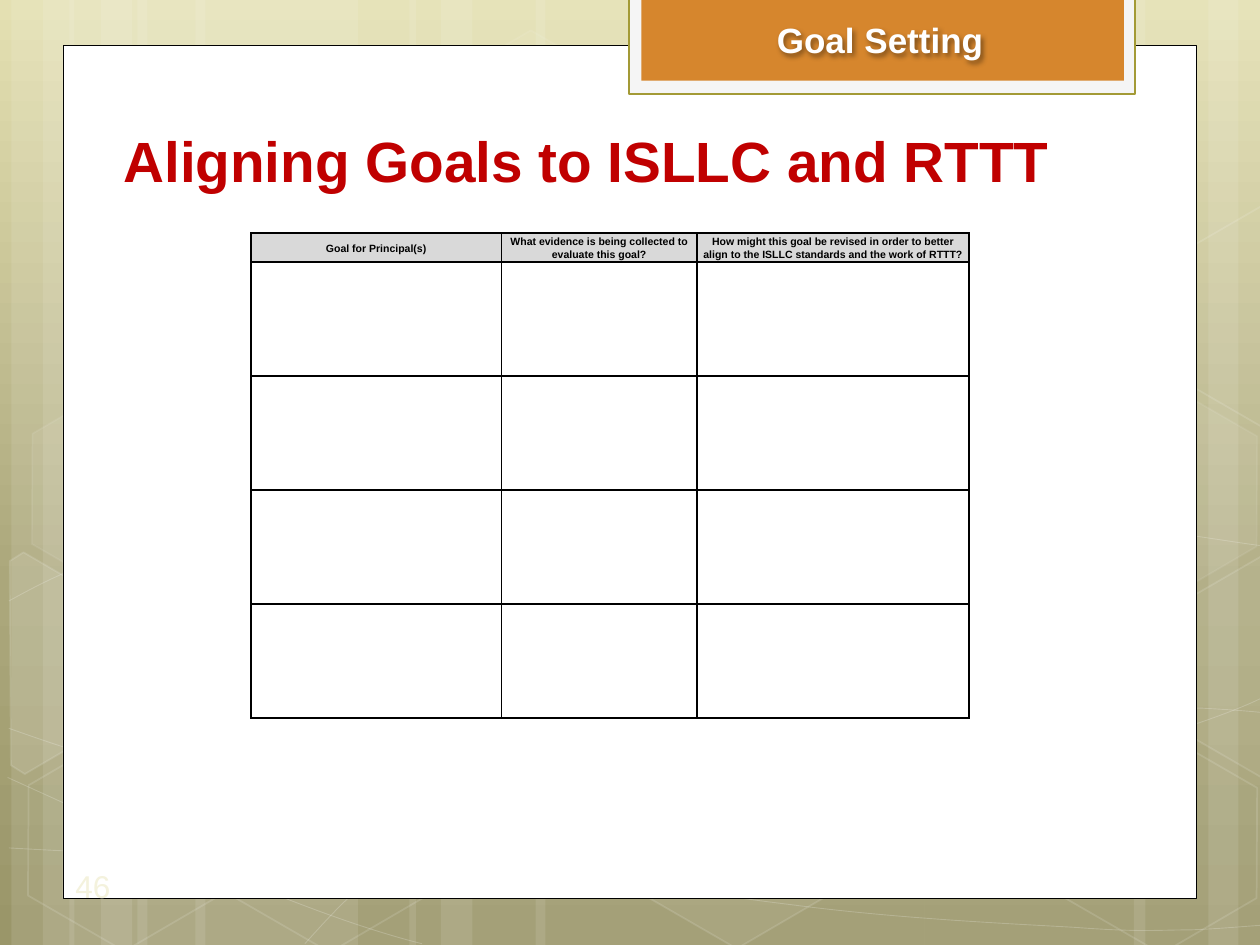
from math import cos, radians, sin
from lxml.etree import SubElement
from pptx import Presentation
from pptx.dml.color import RGBColor
from pptx.enum.shapes import MSO_SHAPE as SHAPE
from pptx.enum.text import MSO_ANCHOR as ANCHOR, PP_ALIGN as ALIGN
from pptx.oxml import parse_xml
from pptx.oxml.ns import nsdecls, qn
from pptx.util import Inches, Pt

WHITE = RGBColor(0xFF, 0xFF, 0xFF)
BLACK = RGBColor(0, 0, 0)
RED = RGBColor(0xC0, 0, 0)
ORANGE = RGBColor(0xD6, 0x86, 0x2D)
OLIVE = RGBColor(0xA3, 0x9A, 0x36)
PALE = RGBColor(0xF5, 0xF5, 0xF5)
CREAM = RGBColor(0xF4, 0xF2, 0xDD)
GREY = RGBColor(0xD9, 0xD9, 0xD9)
BACKDROP = [(0, "E4E0B2"), (62, "ABA77B"), (100, "9A9669")]

# Left and width of the full-height stripes
STRIPES = [(1.09, 1.75), (0.09, 0.5), (0.34, 0.83), (1.55, 1.75), (0.55, 0.5),
           (0.8, 0.83), (7.34, 1.75), (9.59, 0.5), (9, 0.83), (4.25, 3.09),
           (3.25, 0.5), (3.5, 0.83)]
# Bezier points: a start, then two controls and an end for each piece
CURVES = [
    [(0.07, 6.73), (0.61, 6.76), (1.15, 6.79), (1.9, 6.78), (2.65, 6.77),
     (3.58, 6.75), (4.58, 6.65), (5.58, 6.55), (7, 6.36), (7.92, 6.17),
     (8.83, 5.98), (9.77, 5.68), (10.07, 5.51)],
    [(0.07, 4.77), (0.36, 4.61), (0.65, 4.46), (1.21, 4.31), (1.78, 4.16),
     (2.59, 3.94), (3.47, 3.87), (4.36, 3.8), (5.44, 3.79), (6.54, 3.87),
     (7.64, 3.95), (9.47, 4.26), (10.07, 4.34)],
    [(0.06, 6.17), (1.27, 6.72), (2.47, 7.27), (3.35, 7.49)],
    [(0.07, 5.78), (0.38, 5.89), (0.7, 6), (1.28, 6.16), (1.86, 6.31),
     (2.73, 6.56), (3.57, 6.73), (4.4, 6.9), (5.45, 7.08), (6.28, 7.18),
     (7.11, 7.29), (8, 7.33), (8.53, 7.36), (9.06, 7.4), (9.19, 7.38),
     (9.45, 7.38), (9.71, 7.37), (9.89, 7.35), (10.07, 7.34)],
    [(2.42, 7.49), (2.6, 7.29), (2.78, 7.09), (3.02, 6.91), (3.26, 6.72),
     (3.6, 6.53), (3.88, 6.39), (4.16, 6.25), (4.33, 6.19), (4.69, 6.09),
     (5.06, 5.99), (5.73, 5.85), (6.08, 5.78), (6.44, 5.71), (6.49, 5.71),
     (6.8, 5.69), (7.11, 5.66), (7.6, 5.63), (7.94, 5.62), (8.29, 5.61),
     (8.86, 5.62), (8.86, 5.62), (9.08, 5.62), (9.31, 5.62), (9.53, 5.62),
     (9.71, 5.63), (9.88, 5.64), (10.06, 5.66)],
]
# Left, top, fill opacity and line opacity in percent
HEXAGONS = [(3.34, 0.36, 4, 8), (4.97, 5.89, 6, 12), (0.11, 5.91, 0, 12),
            (0.14, 3.12, 7, 8), (1.74, 5.92, 0, 12), (7.53, 4.53, 10, 12),
            (8.34, 5.93, 0, 12), (8.34, 3.14, 7, 8)]
TILT = 30
# Hexagons cut off by the slide edge: centre, tilted outline and fill opacity
CUT_HEXAGONS = [
    ((0.36, 5.36), [(0.08, 4.45), (0.19, 4.38), (0.96, 4.83), (0.95, 5.7),
                    (0.2, 6.14), (0.09, 6.07)], 10),
    ((9.85, 5.2), [(9.26, 4.85), (10.02, 4.41), (10.09, 4.46), (10.09, 6.13),
                   (10.02, 6.17), (9.26, 5.73)], 4),
    ((9.85, 2.41), [(9.26, 2.07), (10.02, 1.63), (10.1, 1.68), (10.09, 3.35),
                    (10.02, 3.39), (9.26, 2.95)], 0),
]
HEADERS = ["Goal for Principal(s)",
           "What evidence is being collected to evaluate this goal?",
           "How might this goal be revised in order to better align to the "
           "ISLLC standards and the work of RTTT?"]
COL_WIDTHS = [1.99, 1.55, 2.16]
HEADER_H, TABLE_H, GOAL_ROWS = 0.23, 3.85, 4


def paint(sp, fill=None, line=None, width=1):
    sp.shadow.inherit = False
    for part, color in ((sp.fill, fill), (sp.line.fill, line)):
        if color is None:
            part.background()
        else:
            part.solid()
            part.fore_color.rgb = color
    if line is not None:
        sp.line.width = Pt(width)


def veil(sp, fill=0, line=0, width=1):
    """Paint in white with the given opacities in percent."""
    paint(sp, WHITE if fill else None, WHITE if line else None, width)
    for xp, opacity in (("./a:solidFill/a:srgbClr", fill), ("./a:ln/a:solidFill/a:srgbClr", line)):
        for clr in sp._element.spPr.xpath(xp):
            SubElement(clr, qn("a:alpha"), val=str(opacity * 1000))


def add_box(slide, x, y, w, h, kind=SHAPE.RECTANGLE):
    return slide.shapes.add_shape(kind, Inches(x), Inches(y), Inches(w), Inches(h))


def add_outline(slide, points, close=False):
    pts = [(Inches(x), Inches(y)) for x, y in points]
    builder = slide.shapes.build_freeform(*pts[0])
    builder.add_line_segments(pts[1:], close=close)
    return builder.convert_to_shape()


def add_curve(slide, points):
    """Join each three segments of the outline into one cubic Bezier piece."""
    sp = add_outline(slide, points)
    segments = sp._element.spPr.xpath(".//a:lnTo")
    for i in range(0, len(segments), 3):
        bezier = parse_xml(f'<a:cubicBezTo {nsdecls("a")}/>')
        segments[i].addprevious(bezier)
        for segment in segments[i:i + 3]:
            bezier.append(segment[0])
            segment.getparent().remove(segment)
    return sp


def untilt(points, cx, cy):
    c, s = cos(radians(TILT)), sin(radians(TILT))
    return [(cx + (x - cx) * c + (y - cy) * s, cy - (x - cx) * s + (y - cy) * c)
            for x, y in points]


def write(tf, text, size, color, bold=False, align=ALIGN.LEFT):
    tf.text = text
    p = tf.paragraphs[0]
    p.alignment = align
    font = p.runs[0].font
    font.name, font.size, font.bold = "Arial", Pt(size), bold
    font.color.rgb = color
    return p


def place(sp, x, y, w, h, anchor=ANCHOR.TOP):
    sp.left, sp.top, sp.width, sp.height = map(Inches, (x, y, w, h))
    tf = sp.text_frame
    tf.word_wrap, tf.vertical_anchor = True, anchor
    return tf


def add_background(slide):
    stops = "".join(f'<a:gs pos="{pos * 1000}"><a:srgbClr val="{color}"/></a:gs>'
                    for pos, color in BACKDROP)
    slide._element.cSld.insert(0, parse_xml(
        f'<p:bg {nsdecls("p", "a")}><p:bgPr><a:gradFill><a:gsLst>{stops}</a:gsLst>'
        '<a:lin ang="5400000" scaled="0"/></a:gradFill><a:effectLst/></p:bgPr></p:bg>'))
    for x, w in STRIPES:
        veil(add_box(slide, x, 0, w, 7.5), fill=10)
    for points in CURVES:
        veil(add_curve(slide, points), line=20, width=0.5)
    for x, y, fill, line in HEXAGONS:
        sp = add_box(slide, x, y, 1.75, 1.52, SHAPE.HEXAGON)
        sp.rotation = TILT
        sp.adjustments[0], sp.adjustments[1] = 0.285, 1.155
        veil(sp, fill, line)
    for centre, points, fill in CUT_HEXAGONS:
        sp = add_outline(slide, untilt(points, *centre), close=True)
        sp.rotation = TILT
        veil(sp, fill, 12)


def add_tab_label(slide):
    sp = slide.shapes.add_textbox(0, 0, 0, 0)
    tf = place(sp, 5.18, 0.09, 3.61, 0.44, ANCHOR.MIDDLE)
    write(tf, "Goal Setting", 20, WHITE, True, ALIGN.CENTER)
    sp._element.spPr.append(parse_xml(
        f'<a:effectLst {nsdecls("a")}><a:outerShdw blurRad="38100" dist="25400" dir="3600000">'
        '<a:srgbClr val="000000"><a:alpha val="40000"/></a:srgbClr></a:outerShdw></a:effectLst>'))


def add_borders(cell):
    for side in ("lnL", "lnR", "lnT", "lnB"):
        ln = SubElement(cell._tc.get_or_add_tcPr(), qn(f"a:{side}"), w=str(Pt(1)))
        SubElement(SubElement(ln, qn("a:solidFill")), qn("a:srgbClr"), val=str(BLACK))


def add_goal_table(slide):
    table = slide.shapes.add_table(GOAL_ROWS + 1, len(HEADERS), Inches(1.99), Inches(1.85),
                                   Inches(sum(COL_WIDTHS)), Inches(TABLE_H)).table
    table.first_row = table.horz_banding = False
    for col, w in zip(table.columns, COL_WIDTHS):
        col.width = Inches(w)
    for i, row in enumerate(table.rows):
        row.height = Inches((TABLE_H - HEADER_H) / GOAL_ROWS if i else HEADER_H)
    for cell in table.iter_cells():
        add_borders(cell)
        cell.fill.background()
    for j, text in enumerate(HEADERS):
        cell = table.cell(0, j)
        cell.fill.solid()
        cell.fill.fore_color.rgb = GREY
        cell.vertical_anchor = ANCHOR.MIDDLE
        cell.margin_left = cell.margin_right = Inches(0.04)
        cell.margin_top = cell.margin_bottom = 0
        write(cell.text_frame, text, 6, BLACK, True, ALIGN.CENTER).line_spacing = 1.15


def main():
    prs = Presentation()
    prs.slide_width, prs.slide_height = Inches(10), Inches(7.5)
    slide = prs.slides.add_slide(prs.slide_layouts[5])
    add_background(slide)

    # White page and the tab at its top
    paint(add_box(slide, 0.5, 0.36, 9, 6.77), WHITE, BLACK, 0.5)
    paint(add_box(slide, 4.99, -0.02, 4.02, 0.77), PALE, OLIVE, 1.25)
    paint(add_box(slide, 5.09, -0.04, 3.83, 0.68), ORANGE)

    # Title, brought in front of the page
    title = slide.shapes.title
    slide.shapes._spTree.append(title._element)
    tf = place(title, 0.8, 0.95, 8.32, 0.58)
    tf.margin_left = Inches(0.18)
    write(tf, "Aligning Goals to ISLLC and RTTT", 32.4, RED, True)

    # Slide number, tab label and table
    number = slide.shapes.add_textbox(0, 0, 0, 0)
    write(place(number, 0.5, 6.83, 4.42, 0.5), "46", 18, CREAM)
    add_tab_label(slide)
    add_goal_table(slide)
    prs.save("out.pptx")


if __name__ == "__main__":
    main()
